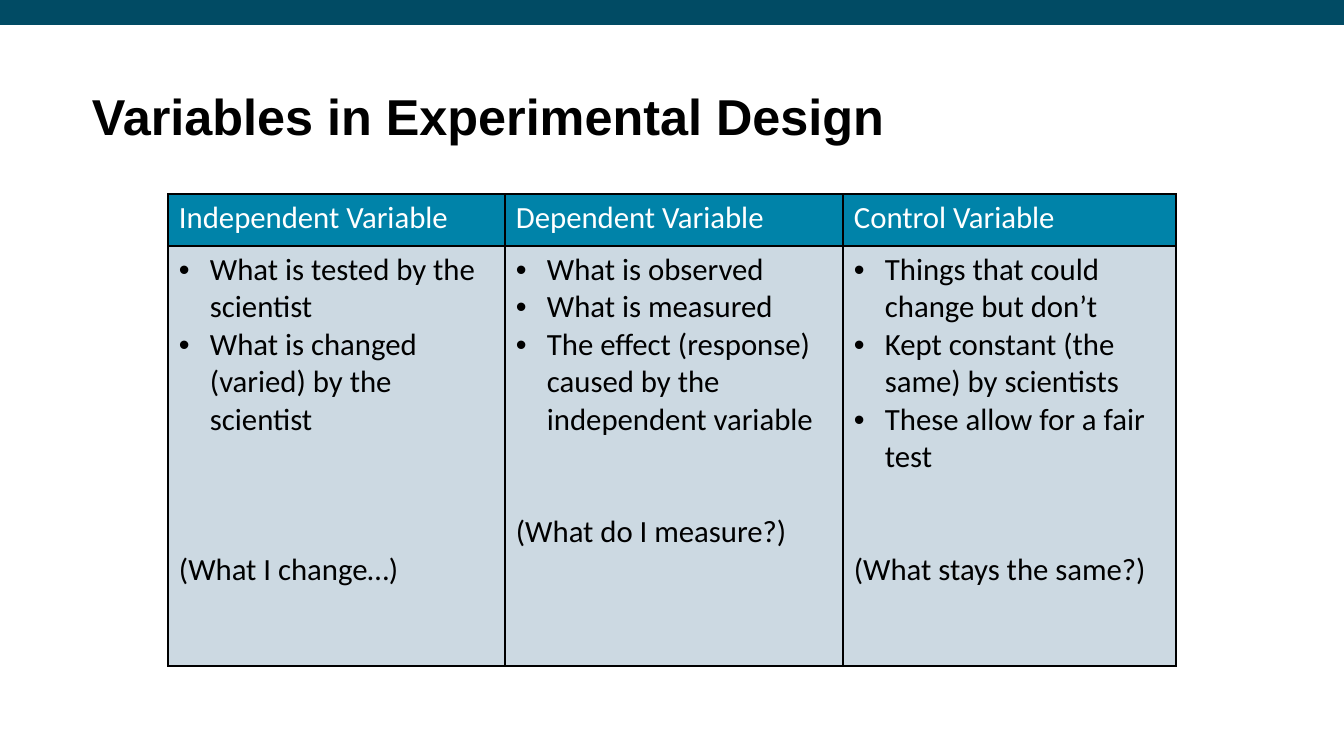
from lxml.etree import SubElement
from pptx import Presentation
from pptx.dml.color import RGBColor
from pptx.enum.shapes import MSO_SHAPE
from pptx.enum.text import MSO_ANCHOR
from pptx.oxml.ns import qn
from pptx.util import Emu, Pt

COLORS = {"band": "014B64", "header": "0083A9", "body": "CCD9E2",
          "black": "000000", "white": "FFFFFF"}
LINE_HEIGHT = 26.85
VARIABLES = [
    ("Independent Variable",
     ["What is tested by the scientist",
      "What is changed (varied) by the scientist"],
     "(What I change…)", 3),
    ("Dependent Variable",
     ["What is observed", "What is measured",
      "The effect (response) caused by the independent variable"],
     "(What do I measure?)", 2),
    ("Control Variable",
     ["Things that could change but don’t",
      "Kept constant (the same) by scientists",
      "These allow for a fair test"],
     "(What stays the same?)", 2),
]


def px(length):
    return Emu(round(length * 914400 / 100.8))


def style_cell(cell, fill, text_color):
    cell.margin_left = cell.margin_right = px(11)
    cell.margin_top = cell.margin_bottom = px(5)
    properties = cell._tc.get_or_add_tcPr()
    for side in ("lnL", "lnR", "lnT", "lnB"):
        border = SubElement(properties, qn(f"a:{side}"), w=str(Pt(1)))
        border_fill = SubElement(border, qn("a:solidFill"))
        SubElement(border_fill, qn("a:srgbClr"), val=COLORS["black"])
    cell.fill.solid()
    cell.fill.fore_color.rgb = RGBColor.from_string(COLORS[fill])
    for paragraph in cell.text_frame.paragraphs:
        for span in paragraph.runs:
            span.font.name = "Calibri"
            span.font.size = Pt(22)
            span.font.bold = False
            span.font.color.rgb = RGBColor.from_string(COLORS[text_color])


deck = Presentation()
deck.slide_width, deck.slide_height = px(1344), px(756)
page = deck.slides.add_slide(deck.slide_layouts[6])

band = page.shapes.add_shape(MSO_SHAPE.RECTANGLE, 0, 0, px(1344), px(25))
band.shadow.inherit = False
band.fill.solid()
band.fill.fore_color.rgb = RGBColor.from_string(COLORS["band"])
band.line.fill.background()

title = page.shapes.add_textbox(px(92), px(46), px(1159), px(146))
frame = title.text_frame
frame.word_wrap = True
frame.vertical_anchor = MSO_ANCHOR.MIDDLE
frame.margin_left = frame.margin_right = frame.margin_top = frame.margin_bottom = 0
frame.text = "Variables in Experimental Design"
frame.paragraphs[0].line_spacing = 0.9
span = frame.paragraphs[0].runs[0]
span.font.name = "Arial"
span.font.size = Pt(36)
span.font.bold = True
span.font.color.rgb = RGBColor.from_string(COLORS["black"])

table = page.shapes.add_table(2, 3, px(168), px(194), px(1008), px(472)).table
for row, height in zip(table.rows, (52, 420)):
    row.height = px(height)
for column, width in zip(table.columns, (337, 338, 333)):
    column.width = px(width)

for index, (name, points, question, gap_lines) in enumerate(VARIABLES):
    header, body = table.cell(0, index), table.cell(1, index)
    header.text_frame.text = name
    body.text_frame.text = "\n".join(points + [question])
    for paragraph in body.text_frame.paragraphs[:-1]:
        properties = paragraph._p.get_or_add_pPr()
        properties.set("marL", str(px(31)))
        properties.set("indent", str(-px(31)))
        SubElement(properties, qn("a:buFont"), typeface="Arial")
        SubElement(properties, qn("a:buChar"), char="•")
    body.text_frame.paragraphs[-1].space_before = Pt(gap_lines * LINE_HEIGHT)
    style_cell(header, "header", "white")
    style_cell(body, "body", "black")

deck.save("out.pptx")
